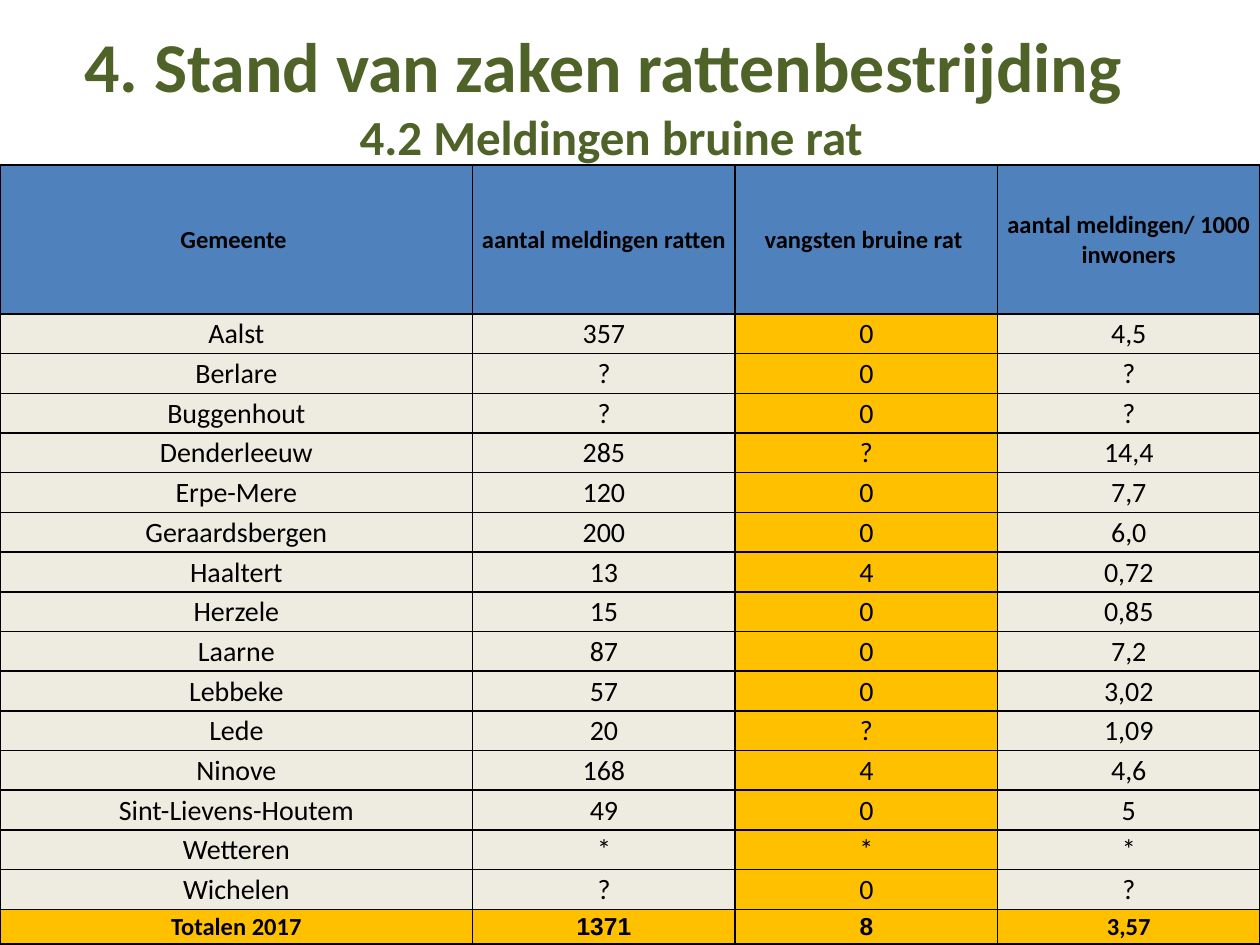
from dataclasses import dataclass

from lxml.etree import SubElement
from pptx import Presentation
from pptx.dml.color import RGBColor
from pptx.enum.text import MSO_ANCHOR, MSO_AUTO_SIZE, PP_ALIGN
from pptx.oxml.ns import qn
from pptx.slide import Slide
from pptx.table import Table, _Cell
from pptx.text.text import _Paragraph
from pptx.util import Cm, Pt


@dataclass(frozen=True)
class Theme:
    green: str = "4F6228"
    black: str = "000000"
    blue: str = "4F81BD"
    cream: str = "EEECE1"
    amber: str = "FFC000"
    font: str = "Calibri"
    total_font: str = "Arial"
    title_size: int = 40
    subtitle_size: int = 28
    strong_size: int = 14
    body_size: int = 16
    border_width: int = 1


@dataclass(frozen=True)
class TextStyle:
    size: int
    color: str
    bold: bool = False
    font: str = "Calibri"


@dataclass(frozen=True)
class Municipality:
    name: str
    reports: str
    catches: str
    reports_per_thousand: str

    def values(self) -> tuple[str, ...]:
        return self.name, self.reports, self.catches, self.reports_per_thousand


THEME = Theme()
STRONG = TextStyle(THEME.strong_size, THEME.black, True, THEME.font)
STRONG_TOTAL = TextStyle(THEME.strong_size, THEME.black, True, THEME.total_font)
BODY = TextStyle(THEME.body_size, THEME.black, False, THEME.font)

TITLE_LINES = (
    ("4. Stand van zaken rattenbestrijding ",
     TextStyle(THEME.title_size, THEME.green, True, THEME.font)),
    ("4.2 Meldingen bruine rat",
     TextStyle(THEME.subtitle_size, THEME.green, True, THEME.font)),
)
HEADERS = ("Gemeente ", "aantal meldingen ratten", "vangsten bruine rat ",
           "aantal meldingen/ 1000 inwoners")
MUNICIPALITIES = (
    Municipality("Aalst", "357", "0", "4,5"),
    Municipality("Berlare", "?", "0", "?"),
    Municipality("Buggenhout", "?", "0", "?"),
    Municipality("Denderleeuw", "285", "?", "14,4"),
    Municipality("Erpe-Mere", "120", "0", "7,7"),
    Municipality("Geraardsbergen", "200", "0", "6,0"),
    Municipality("Haaltert", "13", "4", "0,72"),
    Municipality("Herzele", "15", "0", "0,85"),
    Municipality("Laarne", "87", "0", "7,2"),
    Municipality("Lebbeke", "57", "0", "3,02"),
    Municipality("Lede", "20", "?", "1,09"),
    Municipality("Ninove", "168", "4", "4,6"),
    Municipality("Sint-Lievens-Houtem", "49", "0", "5"),
    Municipality("Wetteren", "*", "*", "*"),
    Municipality("Wichelen", "?", "0", "?"),
)
TOTALS = ("Totalen 2017", "1371", "8", "3,57")

COLUMN_WIDTHS = (9.53, 5.29, 5.29, 5.29)
ROW_HEIGHTS = (3.0, *[0.8] * len(MUNICIPALITIES), 0.7)


def set_attributes(target: object, values: dict) -> None:
    for name, value in values.items():
        setattr(target, name, value)


def write_text(paragraph: _Paragraph, text: str, style: TextStyle) -> None:
    paragraph.alignment = PP_ALIGN.CENTER
    run = paragraph.add_run()
    run.text = text
    set_attributes(run.font, {"name": style.font, "size": Pt(style.size),
                              "bold": style.bold})
    run.font.color.rgb = RGBColor.from_string(style.color)


def add_borders(cell: _Cell) -> None:
    properties = cell._tc.get_or_add_tcPr()
    for side in ("a:lnL", "a:lnR", "a:lnT", "a:lnB"):
        line = SubElement(properties, qn(side), w=str(Pt(THEME.border_width)))
        fill = SubElement(line, qn("a:solidFill"))
        SubElement(fill, qn("a:srgbClr"), val=THEME.black)


def fill_cell(cell: _Cell, text: str, style: TextStyle, color: str) -> None:
    set_attributes(cell, {
        "vertical_anchor": MSO_ANCHOR.MIDDLE,
        "margin_left": Cm(0.02), "margin_right": Cm(0.02),
        "margin_top": Cm(0.02), "margin_bottom": Cm(0),
    })
    add_borders(cell)
    cell.fill.solid()
    cell.fill.fore_color.rgb = RGBColor.from_string(color)
    write_text(cell.text_frame.paragraphs[0], text, style)


def fill_row(table: Table, row: int, texts: tuple[str, ...],
             styles: tuple[TextStyle, ...], colors: tuple[str, ...]) -> None:
    for column, content in enumerate(zip(texts, styles, colors)):
        fill_cell(table.cell(row, column), *content)


def add_title(slide: Slide) -> None:
    title = slide.shapes.title
    set_attributes(title, {"left": Cm(0.89), "top": Cm(0.33),
                           "width": Cm(22.86), "height": Cm(13.77)})
    frame = title.text_frame
    set_attributes(frame, {"word_wrap": True, "auto_size": MSO_AUTO_SIZE.NONE,
                           "vertical_anchor": MSO_ANCHOR.TOP})
    for index, (text, style) in enumerate(TITLE_LINES):
        paragraph = frame.add_paragraph() if index else frame.paragraphs[0]
        write_text(paragraph, text, style)


def add_report_table(slide: Slide) -> None:
    table = slide.shapes.add_table(
        len(ROW_HEIGHTS), len(COLUMN_WIDTHS), Cm(0), Cm(3.33),
        Cm(sum(COLUMN_WIDTHS)), Cm(sum(ROW_HEIGHTS))).table
    set_attributes(table, {"first_row": False, "horz_banding": False})
    for column, width in zip(table.columns, COLUMN_WIDTHS):
        column.width = Cm(width)
    for row, height in zip(table.rows, ROW_HEIGHTS):
        row.height = Cm(height)

    fill_row(table, 0, HEADERS, (STRONG,) * 4, (THEME.blue,) * 4)
    body_colors = (THEME.cream, THEME.cream, THEME.amber, THEME.cream)
    for row, municipality in enumerate(MUNICIPALITIES, start=1):
        fill_row(table, row, municipality.values(), (BODY,) * 4, body_colors)
    fill_row(table, len(ROW_HEIGHTS) - 1, TOTALS,
             (STRONG, STRONG_TOTAL, STRONG_TOTAL, STRONG), (THEME.amber,) * 4)


def main() -> None:
    presentation = Presentation()
    set_attributes(presentation, {"slide_width": Cm(25.4),
                                  "slide_height": Cm(19.05)})
    slide = presentation.slides.add_slide(presentation.slide_layouts[5])
    add_title(slide)
    add_report_table(slide)
    presentation.save("out.pptx")


if __name__ == "__main__":
    main()
